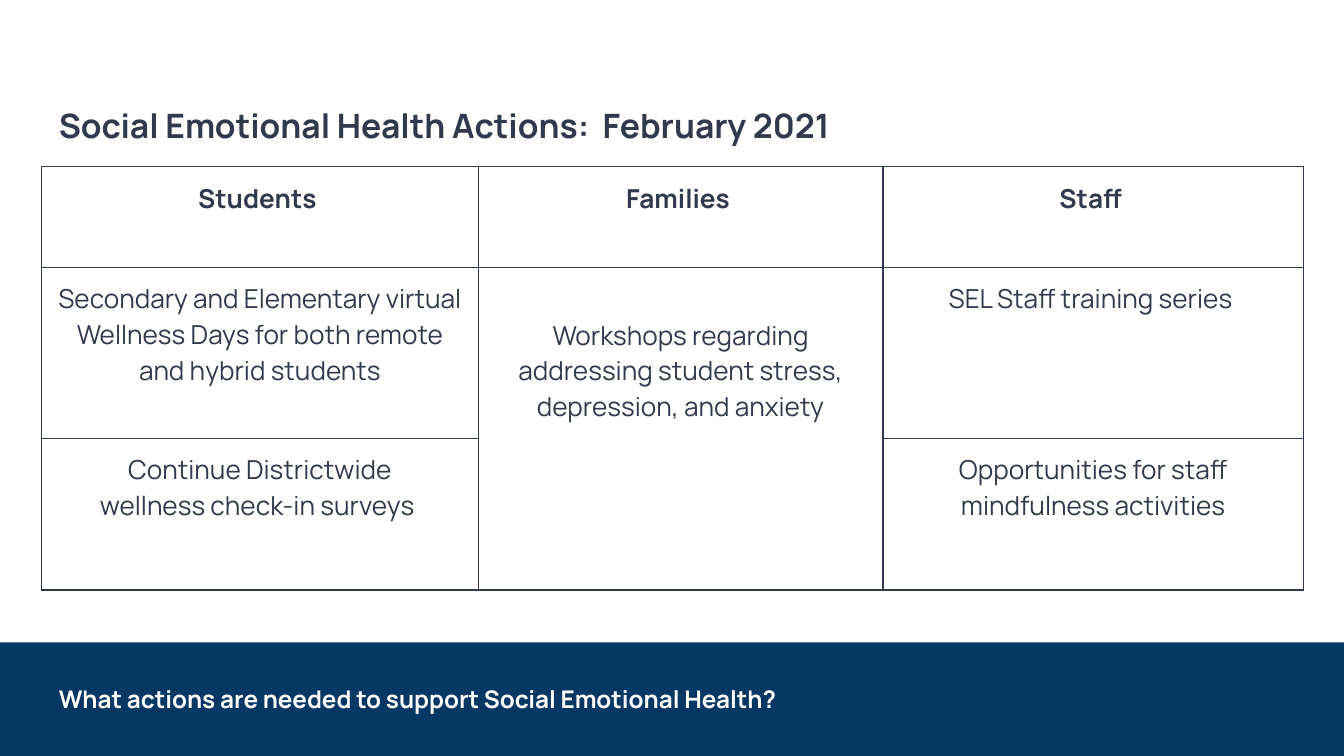
from lxml.etree import SubElement as Sub
from pptx import Presentation
from pptx.dml.color import RGBColor
from pptx.enum.shapes import MSO_SHAPE as Shape
from pptx.enum.text import MSO_ANCHOR as Anchor, PP_ALIGN as Align
from pptx.oxml.ns import qn
from pptx.util import Inches, Pt

INK, NAVY, WHITE = "31394D", "073763", "FFFFFF"
WIDE = 10
HIGH = WIDE * 9 / 16
PAD = 0.1
COLS = [3.25, 3.01, 3.13]
ROWS = [0.75, 1.27, 0.72, 0.41]
CELLS = [
    (0, 0, 1, ["Students "]),
    (0, 1, 1, ["Families "]),
    (0, 2, 1, ["Staff "]),
    (1, 0, 1, ["Secondary and Elementary virtual Wellness Days for both remote and hybrid students"]),
    (1, 1, 3, ["Workshops regarding addressing student stress, depression, and anxiety"]),
    (1, 2, 1, ["SEL Staff training series "]),
    (2, 0, 2, ["Continue Districtwide", "wellness check-in surveys "]),
    (2, 2, 2, ["Opportunities for staff mindfulness activities"]),
]


def paint(color, code):
    color.rgb = RGBColor.from_string(code)


def add_run(para, text, size, code, bold):
    run = para.add_run()
    run.text = text
    font = run.font
    font.name, font.size, font.bold = "Manrope", Pt(size), bold
    paint(font.color, code)


def pad(item, top=PAD):
    item.margin_left = item.margin_right = item.margin_bottom = Inches(PAD)
    item.margin_top = Inches(top)


def add_text(slide, box, text, size, code, anchor, top=PAD):
    frame = slide.shapes.add_textbox(*map(Inches, box)).text_frame
    frame.word_wrap = True
    frame.vertical_anchor = anchor
    pad(frame, top)
    add_run(frame.paragraphs[0], text, size, code, True)


def add_edges(cell):
    props = cell._tc.get_or_add_tcPr()
    for spot, side in enumerate(("lnL", "lnR", "lnT", "lnB")):
        line = Sub(props, qn(f"a:{side}"), w=str(Pt(0.75)))
        fill = Sub(line, qn("a:solidFill"))
        Sub(fill, qn("a:srgbClr"), val=INK)
        props.insert(spot, line)


def add_grid(slide, left, top):
    box = map(Inches, (left, top, sum(COLS), sum(ROWS)))
    table = slide.shapes.add_table(len(ROWS), len(COLS), *box).table
    table.first_row = table.horz_banding = False
    for col, width in zip(table.columns, COLS):
        col.width = Inches(width)
    for row, height in zip(table.rows, ROWS):
        row.height = Inches(height)
    for cell in table.iter_cells():
        cell.fill.background()
        pad(cell)
        add_edges(cell)
    for row, col, span, lines in CELLS:
        cell = table.cell(row, col)
        if span > 1:
            cell.merge(table.cell(row + span - 1, col))
        if span == 3:
            pad(cell, 0.37)
        frame = cell.text_frame
        for num, text in enumerate(lines):
            para = frame.add_paragraph() if num else frame.paragraphs[0]
            para.alignment = Align.CENTER
            add_run(para, text, 14, INK, row == 0)


def add_footer(slide, left, top, width, height):
    box = map(Inches, (left, top, width, height))
    band = slide.shapes.add_shape(Shape.RECTANGLE, *box)
    band.shadow.inherit = False
    band.fill.solid()
    paint(band.fill.fore_color, NAVY)
    band.line.fill.background()
    add_text(slide, (left + 0.34, top + 0.17, 8.73, 0.5),
             "What actions are needed to support Social Emotional Health?",
             13, WHITE, Anchor.MIDDLE)


def main():
    deck = Presentation()
    deck.slide_width, deck.slide_height = Inches(WIDE), Inches(HIGH)
    slide = deck.slides.add_slide(deck.slide_layouts[6])
    add_footer(slide, 0, 4.78, WIDE, HIGH - 4.78)
    add_grid(slide, 0.31, 1.24)
    add_text(slide, (0.34, 0.58, 9.33, 0.97),
             "Social Emotional Health Actions:  February 2021",
             18, INK, Anchor.TOP, 0.2)
    deck.save("out.pptx")


if __name__ == "__main__":
    main()
